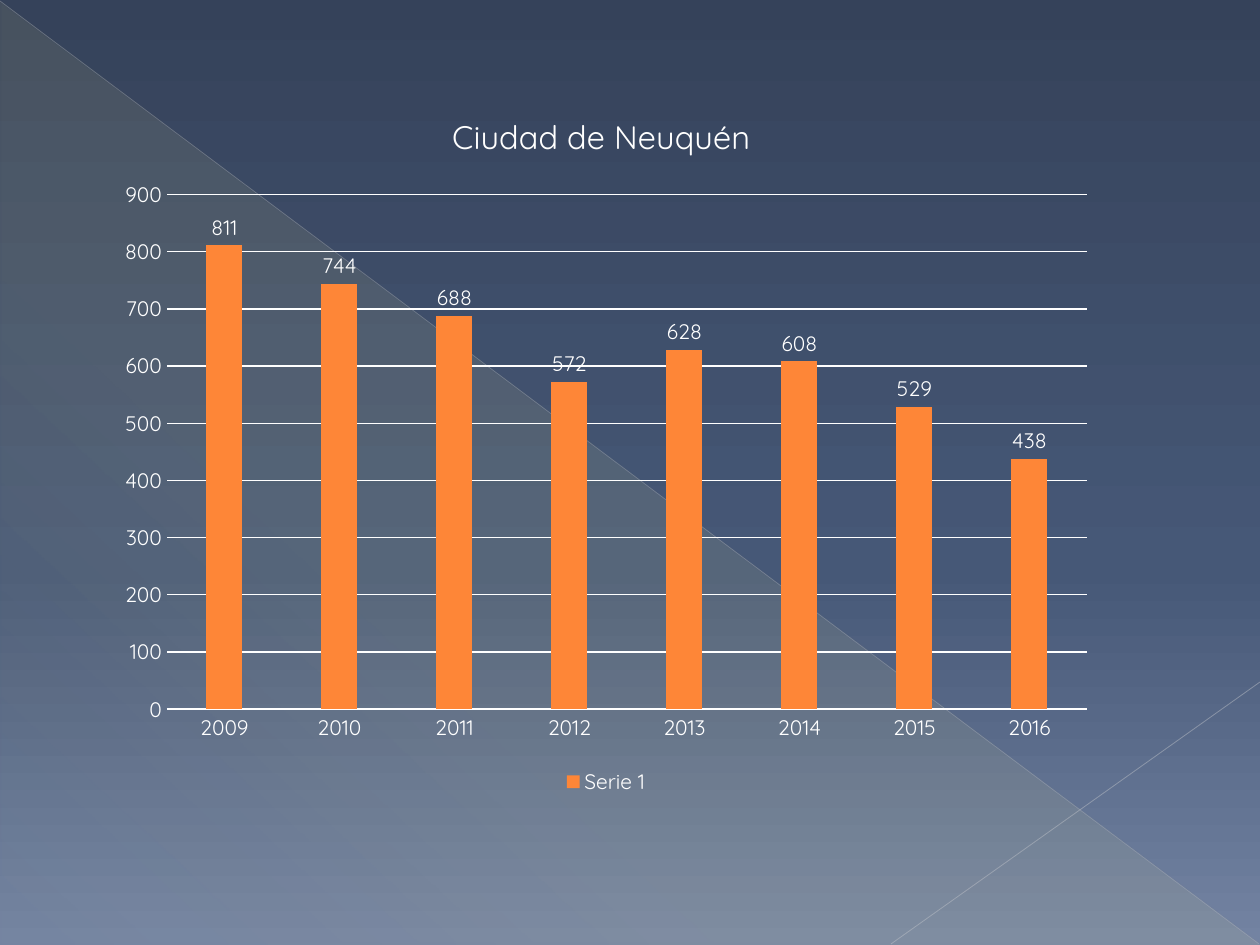
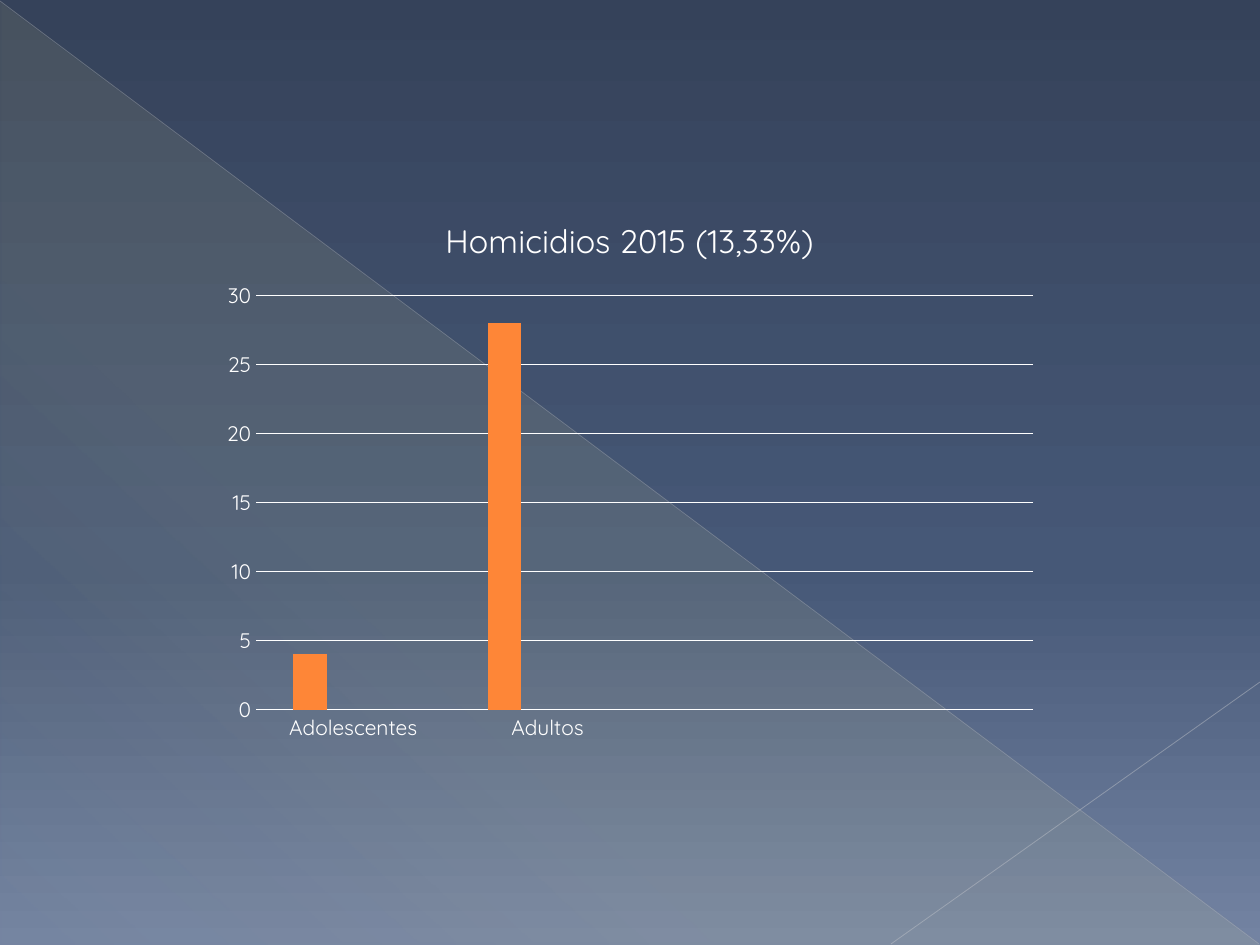
from lxml import etree
from pptx import Presentation
from pptx.chart.data import CategoryChartData
from pptx.dml.color import RGBColor
from pptx.enum.chart import XL_CHART_TYPE, XL_LABEL_POSITION, XL_LEGEND_POSITION, XL_TICK_MARK
from pptx.enum.shapes import MSO_CONNECTOR, MSO_SHAPE
from pptx.oxml.ns import qn
from pptx.util import Pt

COLUMNS = XL_CHART_TYPE.COLUMN_CLUSTERED
OUTSIDE_END = XL_LABEL_POSITION.OUTSIDE_END
BOTTOM = XL_LEGEND_POSITION.BOTTOM
NO_TICK = XL_TICK_MARK.NONE
STRAIGHT = MSO_CONNECTOR.STRAIGHT
RIGHT_TRIANGLE = MSO_SHAPE.RIGHT_TRIANGLE

EMU_PER_PX = 914400 / 126
WIDTH, HEIGHT = 1260, 945
BLANK_LAYOUT = 6

# Shared style
FONT = "Quicksand"
WHITE = "FFFFFF"
GLOW = "FFF39D"
SERIES_COLORS = ("FE8637", "7598D9", "B32C16")
SKY = [(0, "35425A", 100), (60, "465877", 100), (100, "7383A2", 100)]
BEAM = [(0, GLOW, 10), (70, GLOW, 8), (100, GLOW, 1)]
TITLE_SIZE, LABEL_SIZE = 18.6, 12


def px(*lengths):
    return [round(length * EMU_PER_PX) for length in lengths]


def rgb(hex_color):
    return RGBColor.from_string(hex_color)


def set_all(target, values):
    for name, value in values.items():
        setattr(target, name, value)


def set_alpha(color_element, percent):
    etree.SubElement(color_element, qn("a:alpha")).set("val", str(percent * 1000))


def set_gradient(owner, fill, stops, angle):
    """Fill with (position, colour, opacity) stops, angle clockwise in degrees."""
    fill.gradient()
    gradient = next(owner.iter(qn("a:gradFill")))
    for child in list(gradient):
        gradient.remove(child)
    stop_list = etree.SubElement(gradient, qn("a:gsLst"))
    for position, color, opacity in stops:
        stop = etree.SubElement(stop_list, qn("a:gs"), pos=str(position * 1000))
        color_element = etree.SubElement(stop, qn("a:srgbClr"), val=color)
        if opacity < 100:
            set_alpha(color_element, opacity)
    etree.SubElement(gradient, qn("a:lin"), ang=str(angle * 60000), scaled="0")


class Deck:
    def __init__(self):
        self.prs = Presentation()
        self.prs.slide_width, self.prs.slide_height = px(WIDTH, HEIGHT)
        self.slide = None

    def new_slide(self):
        self.slide = self.prs.slides.add_slide(self.prs.slide_layouts[BLANK_LAYOUT])

    def to_master(self, shape):
        self.prs.slide_master.shapes.element.append(shape.element)

    def background(self):
        master = self.prs.slide_master
        set_gradient(master.element, master.background.fill, SKY, 90)

    def beam(self, *box):
        beam = self.slide.shapes.add_shape(RIGHT_TRIANGLE, *px(*box))
        beam.shadow.inherit = False
        beam.line.fill.background()
        set_gradient(beam.element, beam.fill, BEAM, 133)
        self.to_master(beam)

    def ray(self, ends, color, width, opacity):
        ray = self.slide.shapes.add_connector(STRAIGHT, *px(*ends))
        ray.line.color.rgb = rgb(color)
        ray.line.width = Pt(width)
        set_alpha(next(ray.element.iter(qn("a:srgbClr"))), opacity)
        etree.SubElement(ray.element.spPr, qn("a:effectLst"))
        self.to_master(ray)

    def font(self, font, size):
        set_all(font, {"name": FONT, "size": Pt(size), "bold": False})
        font.color.rgb = rgb(WHITE)

    def hairline(self, line):
        line.color.rgb = rgb(WHITE)
        line.width = Pt(0.75)

    def column_chart(self, box, title, categories, series, annotated=False):
        data = CategoryChartData()
        data.categories = categories
        for name, values in series.items():
            data.add_series(name, values)
        chart = self.slide.shapes.add_chart(COLUMNS, *px(*box), data).chart
        self.font(chart.font, 10)

        # Title and legend
        chart.has_title = True
        heading = chart.chart_title
        heading.include_in_layout = False
        heading.text_frame.text = title
        self.font(heading.text_frame.paragraphs[0].runs[0].font, TITLE_SIZE)
        chart.has_legend = annotated
        if annotated:
            set_all(chart.legend, {"position": BOTTOM, "include_in_layout": False})
            self.font(chart.legend.font, LABEL_SIZE)

        # Axes
        for axis in (chart.category_axis, chart.value_axis):
            set_all(axis, {"major_tick_mark": NO_TICK, "minor_tick_mark": NO_TICK})
            self.font(axis.tick_labels.font, LABEL_SIZE)
        self.hairline(chart.category_axis.format.line)
        chart.value_axis.format.line.fill.background()
        self.hairline(chart.value_axis.major_gridlines.format.line)

        # Columns
        plot = chart.plots[0]
        set_all(plot, {"gap_width": 219, "overlap": -27, "vary_by_categories": False})
        for columns, color in zip(plot.series, SERIES_COLORS):
            columns.format.fill.solid()
            columns.format.fill.fore_color.rgb = rgb(color)
            columns.invert_if_negative = False
            if annotated:
                labels = columns.data_labels
                set_all(labels, {"show_value": True, "position": OUTSIDE_END})
                self.font(labels.font, LABEL_SIZE)


def main():
    deck = Deck()

    # Homicides by year, with the shared backdrop placed on the master
    deck.new_slide()
    deck.background()
    deck.beam(1, 2, 1259, 943)
    deck.ray((0, 1, 1259, 944), "BABDC4", 0.39, 35)
    deck.ray((1260, 682, 891, 944), "C1C4CA", 0.47, 45)
    yearly = [811, 744, 688, 572, 628, 608, 529, 438]
    years = [str(2009 + i) for i in range(len(yearly))]
    deck.column_chart((105, 86, 1002, 714), "Ciudad de Neuquén ", years,
                      {"Serie 1": yearly}, annotated=True)

    # Adolescents and adults, with two open categories
    deck.new_slide()
    no_values = [None] * 4
    deck.column_chart((210, 193, 840, 559), "Homicidios 2015 (13,33%)",
                      ["Adolescentes", "Adultos", "", ""],
                      {"Series 1": [4, 28, None, None],
                       "Series 2": no_values, "Series 3": no_values})

    deck.prs.save("out.pptx")


if __name__ == "__main__":
    main()
